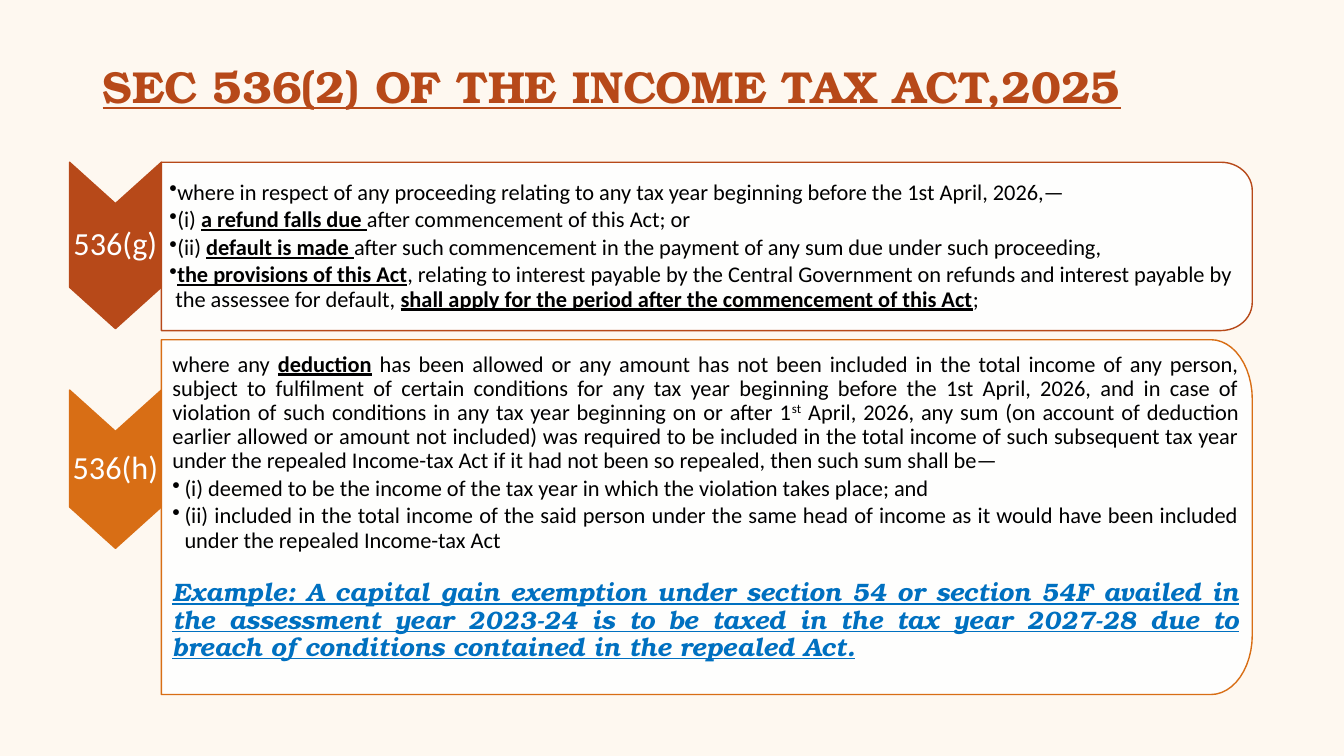
from math import cos, pi, sin

from lxml import etree
from pptx import Presentation
from pptx.dml.color import RGBColor
from pptx.enum.text import MSO_ANCHOR, PP_ALIGN
from pptx.oxml.ns import qn
from pptx.util import Inches, Pt

MIDDLE, TOP = MSO_ANCHOR.MIDDLE, MSO_ANCHOR.TOP
LEFT, CENTER, JUSTIFY = PP_ALIGN.LEFT, PP_ALIGN.CENTER, PP_ALIGN.JUSTIFY
SANS, SERIF = "Calibri", "TeX Gyre Bonum"
RUST, ORANGE, BLUE = "B74919", "D86E15", "0070C0"
WHITE, BLACK, CREAM = "FFFFFF", "000000", "FEF8F0"
STEPS = 12


def color(code):
    return RGBColor.from_string(code)


def grid(cells):
    return Inches(cells / 10)


def strong(text):
    return text, {"bold": True, "underline": True}


class Deck:
    def __init__(self):
        self.prs = Presentation()
        self.prs.slide_width, self.prs.slide_height = Inches(13.33), Inches(7.5)
        self.slide = self.prs.slides.add_slide(self.prs.slide_layouts[6])
        fill = self.slide.background.fill
        fill.solid()
        fill.fore_color.rgb = color(CREAM)

    def frame(self, shape, pads, anchor=MIDDLE):
        frame = shape.text_frame
        frame.word_wrap = True
        frame.vertical_anchor = anchor
        (frame.margin_left, frame.margin_top,
         frame.margin_right, frame.margin_bottom) = map(grid, pads)
        return frame

    def prose(self, para, parts, size, font=SANS, ink=BLACK, align=LEFT,
              hang=0, before=0, after=0, **style):
        para.alignment = align
        para.line_spacing = 0.9
        para.space_before, para.space_after = Pt(before), Pt(after)
        props = para._p.get_or_add_pPr()
        props.set("marL", str(grid(hang)))
        props.set("indent", str(-grid(hang)))
        if hang:
            etree.SubElement(props, qn("a:buChar")).set("char", "•")
        for part in parts:
            text, extra = (part, {}) if isinstance(part, str) else part
            run = para.add_run()
            run.text = text
            face = run.font
            face.name, face.size = font, Pt(size)
            face.color.rgb = color(ink)
            look = {**style, **extra}
            face.bold = look.get("bold", False)
            face.italic = look.get("italic", False)
            face.underline = look.get("underline", False)
            if look.get("raised"):
                run._r.get_or_add_rPr().set("baseline", "30000")

    def outline(self, points, fill, line, alpha=100):
        spots = [(grid(x), grid(y)) for x, y in points]
        pen = self.slide.shapes.build_freeform(*spots[0])
        pen.add_line_segments(spots[1:], close=True)
        shape = pen.convert_to_shape()
        shape.shadow.inherit = False
        shape.fill.solid()
        shape.fill.fore_color.rgb = color(fill)
        if alpha < 100:
            tint = shape._element.spPr.find(qn("a:solidFill"))[0]
            etree.SubElement(tint, qn("a:alpha")).set("val", str(alpha * 1000))
        shape.line.color.rgb = color(line)
        shape.line.width = Pt(1)
        return shape

    def title(self, text, x, y, w, h):
        box = self.slide.shapes.add_textbox(*map(grid, (x, y, w, h)))
        frame = self.frame(box, (1, 0.5, 1, 0.5))
        self.prose(frame.paragraphs[0], [text], 32, SERIF, RUST,
                   bold=True, underline=True)

    def arrow(self, text, x, y, w, h, hue):
        mid, dip = x + w / 2, 4.1
        shape = self.outline([(x, y), (mid, y + dip), (x + w, y),
                              (x + w, y + h - dip), (mid, y + h),
                              (x, y + h - dip)], hue, hue)
        frame = self.frame(shape, (0.2, 4.7, 0.2, 4.7))
        self.prose(frame.paragraphs[0], [text], 23, ink=WHITE, align=CENTER)

    def panel(self, x, y, w, h, rx, ry, hue, pads, anchor, rows):
        turns = [pi / 2 * step / STEPS for step in range(STEPS + 1)]
        upper = [(x + w - rx + rx * sin(t), y + ry - ry * cos(t)) for t in turns]
        lower = [(px, 2 * y + h - py) for px, py in reversed(upper)]
        shape = self.outline([(x, y), *upper, *lower, (x, y + h)],
                             WHITE, hue, 90)
        frame = self.frame(shape, pads, anchor)
        for index, (parts, look) in enumerate(rows):
            para = frame.add_paragraph() if index else frame.paragraphs[0]
            self.prose(para, parts, **{"size": 16, "after": 2.4, **look})


def main():
    deck = Deck()
    deck.title("SEC 536(2) OF THE INCOME TAX ACT,2025", 9.2, 1.6, 115, 14.5)

    point = {"hang": 0.6}
    refund = [
        (["where in respect of any proceeding relating to any tax year "
          "beginning before the 1st April, 2026,—"], {**point, "align": JUSTIFY}),
        (["(i) ", strong("a refund falls due "),
          "after commencement of this Act; or"], {**point, "align": JUSTIFY}),
        (["(ii) ", strong("default is made "),
          "after such commencement in the payment of any sum due under such "
          "proceeding,"], point),
        ([strong("the provisions of this Act"),
          ", relating to interest payable by the Central Government on refunds "
          "and interest payable by the assessee for default, ",
          strong("shall apply for the period after the commencement of this Act"),
          ";"], point),
    ]
    plain = {"align": JUSTIFY}
    item = {"align": JUSTIFY, "hang": 1.2}
    sample = {"align": JUSTIFY, "size": 18, "font": SERIF, "ink": BLUE,
              "before": 17, "bold": True, "italic": True, "underline": True}
    breach = [
        (["where any ", strong("deduction"),
          " has been allowed or any amount has not been included in the total "
          "income of any person, subject to fulfilment of certain conditions for "
          "any tax year beginning before the 1st April, 2026, and in case of "
          "violation of such conditions in any tax year beginning on or after 1",
          ("st", {"raised": True}),
          " April, 2026, any sum (on account of deduction earlier allowed or "
          "amount not included) was required to be included in the total income "
          "of such subsequent tax year under the repealed Income-tax Act if it "
          "had not been so repealed, then such sum shall be—"], plain),
        (["(i) deemed to be the income of the tax year in which the violation "
          "takes place; and"], item),
        (["(ii) included in the total income of the said person under the same "
          "head of income as it would have been included under the repealed "
          "Income-tax Act"], item),
        (["Example: A capital gain exemption under section 54 or section 54F "
          "availed in the assessment year 2023-24 is to be taxed in the tax year "
          "2027-28 due to breach of conditions contained in the repealed Act."],
         sample),
    ]

    deck.arrow("536(g)", 6.9, 16.1, 9.1, 16.5, RUST)
    deck.panel(16, 16.1, 108.2, 16.7, 3.1, 2.8, RUST,
               (0.8, 1, 1, 1), MIDDLE, refund)
    deck.arrow("536(h)", 6.9, 38.7, 9.1, 15.7, ORANGE)
    deck.panel(16, 33.7, 108.2, 35.2, 4.1, 5.9, ORANGE,
               (1.1, 1.3, 1.3, 1.3), TOP, breach)
    deck.prs.save("out.pptx")


if __name__ == "__main__":
    main()
